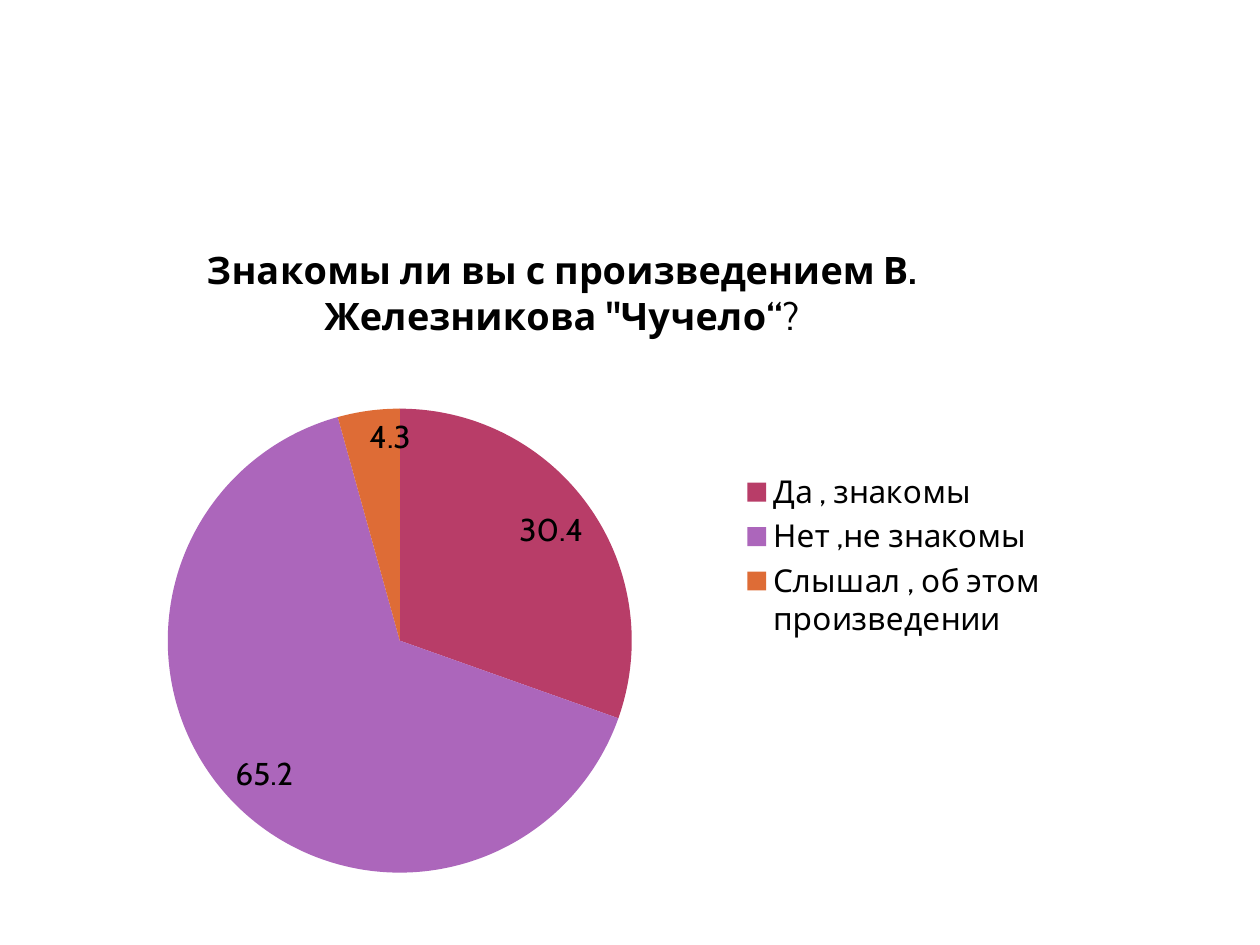
"""Build a slide with a pie chart of survey answers."""
from lxml import etree
from pptx import Presentation
from pptx import util as u
from pptx.chart.data import CategoryChartData
from pptx.dml.color import RGBColor
from pptx.enum import chart as ec
from pptx.oxml.ns import qn

BLACK = RGBColor(0x00, 0x00, 0x00)
ROSE = RGBColor(0xB8, 0x3D, 0x68)
VIOLET = RGBColor(0xAC, 0x66, 0xBB)
ORANGE = RGBColor(0xDE, 0x6C, 0x36)

FONT = "Cabin"
ANSWERS = [
    ("Да , знакомы", 30.4, ROSE),
    ("Нет ,не знакомы", 65.2, VIOLET),
    ("Слышал , об этом произведении", 4.3, ORANGE),
]
TITLE_RUNS = [("Знакомы ли вы с произведением В. Железникова \"Чучело“", True), ("?", False)]
PLOT_LAYOUT = {"layoutTarget": "inner", "xMode": "edge", "yMode": "edge",
               "x": 0.105, "y": 0.28, "w": 0.465, "h": 0.695}


def style_font(font, size, bold=False):
    for name, value in {"name": FONT, "size": u.Pt(size), "bold": bold}.items():
        setattr(font, name, value)
    font.color.rgb = BLACK


def add_pie(s, left, top, width, height):
    data = CategoryChartData(number_format="General")
    data.categories = [label for label, _, _ in ANSWERS]
    data.add_series("Series 1", [value for _, value, _ in ANSWERS])
    frame = s.shapes.add_chart(ec.XL_CHART_TYPE.PIE, left, top, width, height, data)
    chart = frame.chart
    style_font(chart.font, 18)
    return chart


def set_title(chart):
    chart.has_title = True
    p = chart.chart_title.text_frame.paragraphs[0]
    style_font(p.font, 21.6, True)
    for words, bold in TITLE_RUNS:
        r = p.add_run()
        r.text = words
        style_font(r.font, 21.6, bold)
    chart.chart_title.include_in_layout = False


def set_legend(chart):
    chart.has_legend = True
    chart.legend.position = ec.XL_LEGEND_POSITION.RIGHT
    chart.legend.include_in_layout = False
    style_font(chart.legend.font, 18)


def set_slices(plot):
    plot.vary_by_categories = True
    for i, (_, _, color) in enumerate(ANSWERS):
        fill = plot.series[0].points[i].format.fill
        fill.solid()
        fill.fore_color.rgb = color
    plot.has_data_labels = True
    labels = plot.data_labels
    labels.show_value = True
    labels.position = ec.XL_LABEL_POSITION.INSIDE_END
    style_font(labels.font, 18)


def place_plot(chart):
    area = chart.element.find(".//" + qn("c:plotArea"))
    layout = area.find(qn("c:layout"))
    if layout is None:
        layout = etree.Element(qn("c:layout"))
        area.insert(0, layout)
    manual = etree.SubElement(layout, qn("c:manualLayout"))
    for name, value in PLOT_LAYOUT.items():
        etree.SubElement(manual, qn("c:" + name)).set("val", str(value))


def main():
    prs = Presentation()
    prs.slide_width, prs.slide_height = u.Inches(10), u.Inches(7.5)
    s = prs.slides.add_slide(prs.slide_layouts[6])
    chart = add_pie(s, u.Inches(0.5), u.Inches(1.76), u.Inches(7.92), u.Inches(5.3))
    set_title(chart)
    set_legend(chart)
    set_slices(chart.plots[0])
    place_plot(chart)
    prs.save("out.pptx")


if __name__ == "__main__":
    main()
